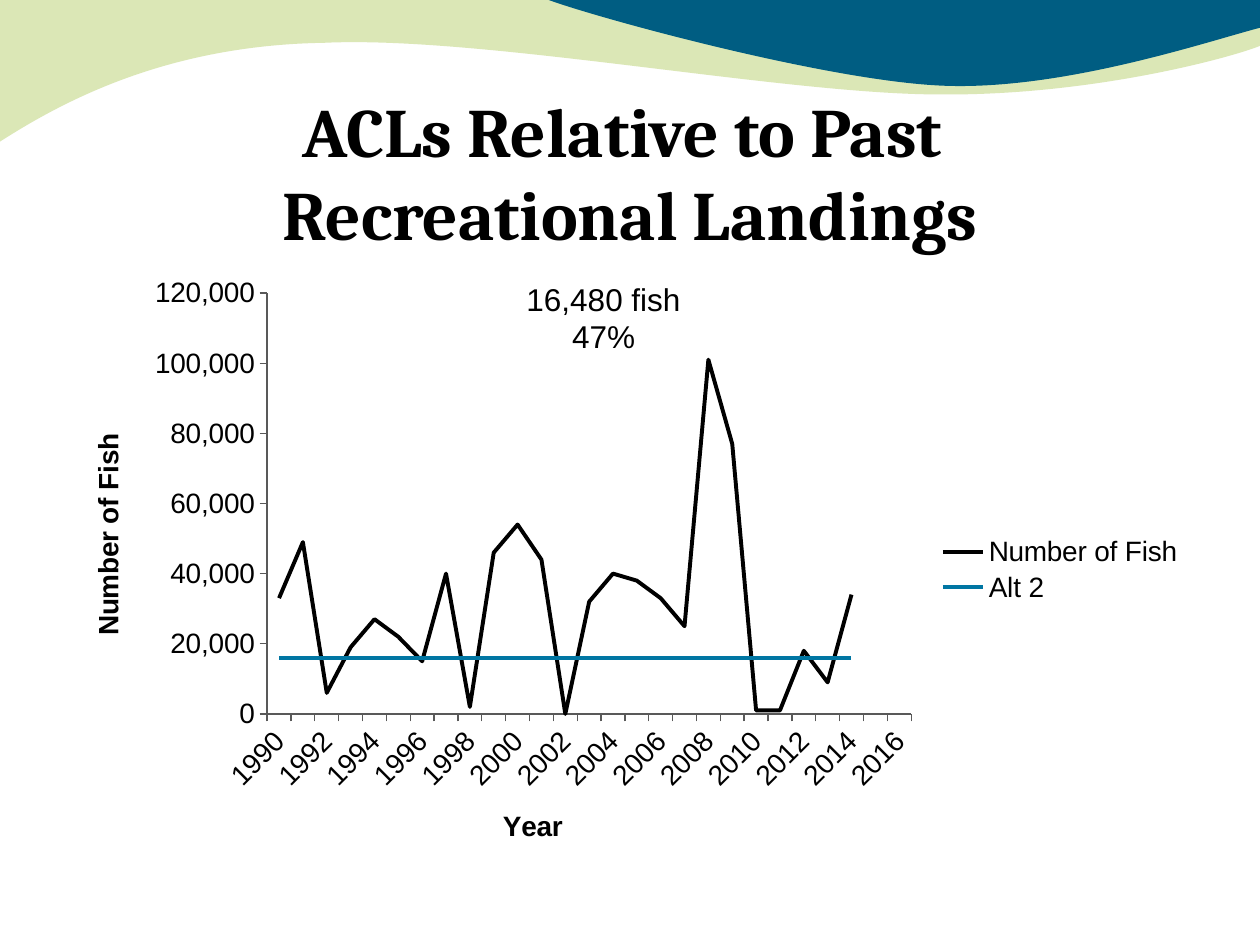
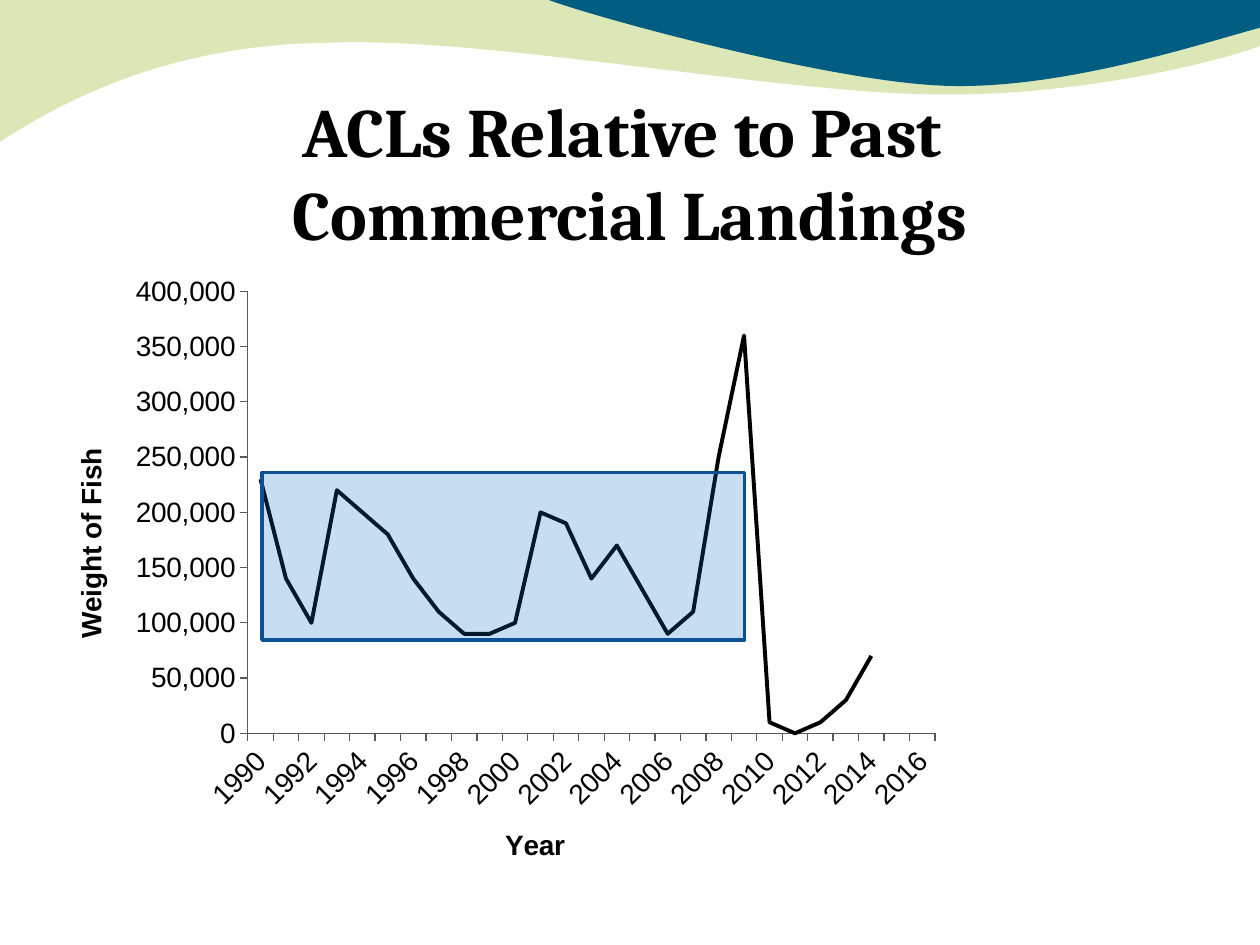
import pptx
import pptx.util
import pptx.dml.color
import pptx.chart.data
import pptx.enum.chart
import pptx.enum.text
import pptx.enum.shapes
import pptx.oxml
import pptx.oxml.ns

WIDE, HIGH = 10, 7.5
INK = {"text": "000000", "green": "DBE7B6", "navy": "005D82", "limit": "0076A3",
       "axis": "595959", "box": "0F6FC6", "edge": "0B5292"}
YEARS = range(1990, 2017)
FISH = [33, 49, 6, 19, 27, 22, 15, 40, 2, 46, 54, 44, 0, 32, 40, 38, 33, 25, 101,
        77, 1, 1, 18, 9, 34]
LIMIT = [16] * len(FISH)
WEIGHT = [230, 140, 100, 220, 200, 180, 140, 110, 90, 90, 100, 200, 190, 140, 170,
          130, 90, 110, 250, 360, 10, 0, 10, 30, 70]
GREEN = [(0, 0), (4.4, -0.01),
         ((4.76, 0.17), (6.64, 0.63), (7.58, 0.63)),
         ((8.53, 0.63), (9.58, 0.26), (10, 0.09)),
         (10.01, 0.36),
         ((9.83, 0.44), (8.7, 0.76), (7.46, 0.75)),
         ((6.22, 0.75), (3.82, 0.28), (2.57, 0.34)),
         ((1.29, 0.36), (0.46, 0.83), (-0.01, 1.13))]
NAVY = [(4.33, -0.01),
        ((4.66, 0.12), (6.54, 0.64), (7.48, 0.68)),
        ((8.43, 0.72), (9.58, 0.33), (10, 0.22)),
        (10, 0)]


def tint(name):
    return pptx.dml.color.RGBColor.from_string(INK[name])


def area(*shares):
    return [pptx.util.Inches(share / 100 * side) for share, side in
            zip(shares, (WIDE, HIGH, WIDE, HIGH))]


def make(tag, body):
    space = pptx.oxml.ns.nsdecls(tag[0])
    return pptx.oxml.parse_xml(f"<{tag} {space}>{body}</{tag}>")


def paint(shape, fill, edge=None):
    shape.shadow.inherit = False
    shape.fill.solid()
    shape.fill.fore_color.rgb = tint(fill)
    if edge:
        shape.line.color.rgb = tint(edge)
        shape.line.width = pptx.util.Pt(2)
    else:
        shape.line.fill.background()


def add_wave(slide, steps, fill):
    knots = [step[-1] if len(step) == 3 else step for step in steps]
    left, top = (min(axis) for axis in zip(*knots))
    dots = [(x * 100, y * 100) for x, y in knots]
    pen = slide.shapes.build_freeform(*dots[0], scale=9144)
    pen.add_line_segments(dots[1:], close=True)
    shape = pen.convert_to_shape()
    lines = shape._element.findall(".//" + pptx.oxml.ns.qn("a:lnTo"))
    for line, step in zip(lines, steps[1:]):
        if len(step) == 3:
            bend = "".join(f'<a:pt x="{round((x - left) * 100)}" '
                           f'y="{round((y - top) * 100)}"/>' for x, y in step)
            line.getparent().replace(line, make("a:cubicBezTo", bend))
    paint(shape, fill)


def set_font(font, size, bold=False, face="Arial"):
    font.name = face
    font.size = pptx.util.Pt(size)
    font.bold = bold
    font.color.rgb = tint("text")


def add_text(slide, place, text, face, size, bold=False):
    frame = slide.shapes.add_textbox(*area(*place)).text_frame
    frame.word_wrap = True
    frame.text = text
    for para in frame.paragraphs:
        para.alignment = pptx.enum.text.PP_ALIGN.CENTER
        set_font(para.font, size, bold, face)
    return frame


def start_slide(deck, title):
    slide = deck.slides.add_slide(deck.slide_layouts[6])
    add_wave(slide, GREEN, "green")
    add_wave(slide, NAVY, "navy")
    frame = add_text(slide, (5, 10.27, 90, 16.67), title, "Cambria", 39.6, True)
    frame.margin_left = frame.margin_right = frame.margin_bottom = 0
    frame.vertical_anchor = pptx.enum.text.MSO_ANCHOR.BOTTOM
    return slide


def set_place(node, index, shares):
    old = node.find(pptx.oxml.ns.qn("c:layout"))
    if old is not None:
        node.remove(old)
    target = '<c:layoutTarget val="inner"/>' if len(shares) == 4 else ""
    modes = '<c:xMode val="edge"/><c:yMode val="edge"/>'
    sizes = "".join(f'<c:{key} val="{share / 100:.4f}"/>'
                    for key, share in zip("xywh", shares))
    node.insert(index, make(
        "c:layout", f"<c:manualLayout>{target}{modes}{sizes}</c:manualLayout>"))


def style_axis(axis, title, spot):
    axis.has_major_gridlines = False
    axis.major_tick_mark = pptx.enum.chart.XL_TICK_MARK.OUTSIDE
    axis.minor_tick_mark = pptx.enum.chart.XL_TICK_MARK.NONE
    axis.format.line.color.rgb = tint("axis")
    axis.format.line.width = pptx.util.Pt(0.75)
    set_font(axis.tick_labels.font, 16)
    frame = axis.axis_title.text_frame
    frame.text = title
    set_font(frame.paragraphs[0].font, 16, True)
    set_place(axis.axis_title._element, 1, spot)


def add_lines(slide, series, title, top, step, plot, spots):
    data = pptx.chart.data.CategoryChartData(number_format="#,##0")
    data.categories = YEARS
    for name, values, _ in series:
        data.add_series(name, [value * 1000 for value in values])
    chart = slide.shapes.add_chart(pptx.enum.chart.XL_CHART_TYPE.LINE,
                                   *area(5, 28.27, 90, 64), data).chart
    chart.has_title = False
    set_font(chart.font, 16)
    chart.has_legend = len(series) > 1
    if chart.has_legend:
        chart.legend.position = pptx.enum.chart.XL_LEGEND_POSITION.RIGHT
        chart.legend.include_in_layout = False
        set_font(chart.legend.font, 16)
    chart.plots[0].vary_by_categories = False
    for line, (_, _, ink) in zip(chart.plots[0].series, series):
        line.smooth = False
        line.marker.style = pptx.enum.chart.XL_MARKER_STYLE.NONE
        line.format.line.color.rgb = tint(ink)
        line.format.line.width = pptx.util.Pt(2.25)
    years, scale = chart.category_axis, chart.value_axis
    style_axis(years, "Year", spots[0])
    style_axis(scale, title, spots[1])
    scale.minimum_scale, scale.maximum_scale, scale.major_unit = 0, top, step
    scale.tick_labels.number_format = "#,##0"
    scale.tick_labels.number_format_is_linked = False
    node = years._element
    node.find(pptx.oxml.ns.qn("c:txPr")).bodyPr.set("rot", "-2700000")
    skip = make("c:tickLblSkip", "")
    skip.set("val", "2")
    node.find(pptx.oxml.ns.qn("c:noMultiLvlLbl")).addprevious(skip)
    set_place(chart._chartSpace.chart.plotArea, 0, plot)


def add_range(slide, place):
    shape = slide.shapes.add_shape(pptx.enum.shapes.MSO_SHAPE.RECTANGLE, *area(*place))
    paint(shape, "box", "edge")
    alpha = make("a:alpha", "")
    alpha.set("val", "23000")
    shape._element.spPr.find(".//" + pptx.oxml.ns.qn("a:srgbClr")).append(alpha)


def main():
    deck = pptx.Presentation()
    deck.slide_width = pptx.util.Inches(WIDE)
    deck.slide_height = pptx.util.Inches(HIGH)

    slide = start_slide(deck, "ACLs Relative to Past \vRecreational Landings")
    add_lines(slide, [("Number of Fish", FISH, "text"), ("Alt 2", LIMIT, "limit")],
              "Number of Fish", 120000, 20000, (18, 4.3, 56.8, 69.6),
              [(38.35, 88.7), (1.95, 26.7)])
    add_text(slide, (40, 28.93, 15.8, 9.47), "16,480 fish\n47%", "Arial", 18)

    slide = start_slide(deck, "ACLs Relative to Past \vCommercial Landings")
    add_lines(slide, [("Series 1", WEIGHT, "text")],
              "Weight of Fish", 400000, 50000, (16.3, 4, 60.6, 73.1),
              [(38.55, 91.7), (0.45, 29.2)])
    add_range(slide, (20.8, 50, 38.3, 17.73))
    deck.save("out.pptx")


if __name__ == "__main__":
    main()
